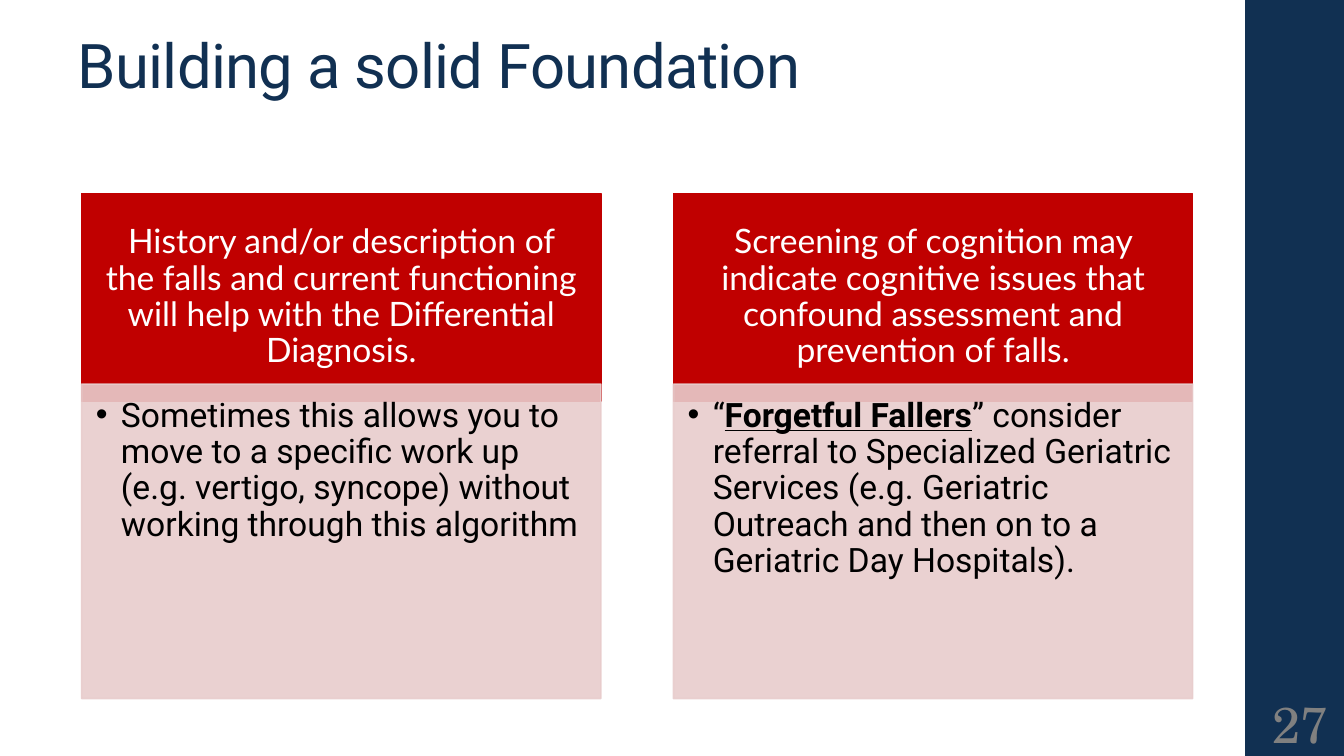
import pptx
import pptx.util
import pptx.dml.color
import pptx.enum.shapes
import pptx.enum.text
import pptx.oxml.ns
from lxml import etree

Inches = pptx.util.Inches
Align = pptx.enum.text.PP_ALIGN
Anchor = pptx.enum.text.MSO_ANCHOR

TITLE = "Building a solid Foundation"
PAGE_NUMBER = "27"
CARDS = [
    {
        "heading": "History and/or description of the falls and current functioning "
                   "will help with the Differential Diagnosis.",
        "detail": [("Sometimes this allows you to move to a specific work up "
                    "(e.g. vertigo, syncope) without working through this algorithm", False)],
    },
    {
        "heading": "Screening of cognition may indicate cognitive issues that "
                   "confound assessment and prevention of falls.",
        "detail": [
            ("“", False),
            ("Forgetful Fallers", True),
            ("” consider referral to Specialized Geriatric Services (e.g. Geriatric "
             "Outreach and then on to a Geriatric Day Hospitals).", False),
        ],
    },
]

NAVY, RED, PINK, GREY = "113052", "C00000", "E8CCCC", "808080"
CARD_LEFT, CARD_STEP, CARD_WIDTH = 0.81, 5.87, 5.15
HEADING_TOP, HEADING_HEIGHT = 1.92, 2.06
DETAIL_TOP, DETAIL_HEIGHT = 3.81, 3.12


def rgb(value):
    return pptx.dml.color.RGBColor.from_string(value)


def add_child(parent, tag, **attributes):
    child = etree.SubElement(parent, pptx.oxml.ns.qn(tag))
    for name, value in attributes.items():
        child.set(name, value)
    return child


def add_panel(page, left, top, width, height, color, outlined=True, opacity=None):
    panel = page.shapes.add_shape(
        pptx.enum.shapes.MSO_SHAPE.RECTANGLE,
        Inches(left), Inches(top), Inches(width), Inches(height))
    panel.shadow.inherit = False
    panel.fill.solid()
    panel.fill.fore_color.rgb = rgb(color)
    if outlined:
        panel.line.color.rgb = rgb(color)
        panel.line.width = pptx.util.Pt(1.1)
    else:
        panel.line.fill.background()
    if opacity:
        for color_node in panel._element.spPr.iter(pptx.oxml.ns.qn("a:srgbClr")):
            add_child(color_node, "a:alpha", val=str(opacity * 1000))
    return panel


def write(box, spans, font, size, color, align=Align.LEFT, anchor=Anchor.TOP,
          insets=(0.1, 0.05, 0.1, 0.05), line_spacing=0.9, bullet=False, tracking=None):
    frame = box.text_frame
    frame.word_wrap = True
    frame.auto_size = pptx.enum.text.MSO_AUTO_SIZE.NONE
    frame.vertical_anchor = anchor
    (frame.margin_left, frame.margin_top,
     frame.margin_right, frame.margin_bottom) = map(Inches, insets)
    para = frame.paragraphs[0]
    para.alignment = align
    para.line_spacing = line_spacing
    if bullet:
        properties = para._p.get_or_add_pPr()
        properties.set("marL", str(Inches(0.25)))
        properties.set("indent", str(-Inches(0.25)))
        add_child(properties, "a:buFont", typeface="Arial")
        add_child(properties, "a:buChar", char="•")
    for text, emphasis in spans:
        span = para.add_run()
        span.text = text
        span.font.name = font
        span.font.size = pptx.util.Pt(size)
        span.font.color.rgb = rgb(color)
        span.font.bold = emphasis
        span.font.underline = emphasis
        if tracking:
            span._r.get_or_add_rPr().set("spc", str(round(tracking * 100)))


def add_card(page, left, heading, detail):
    heading_panel = add_panel(page, left, HEADING_TOP, CARD_WIDTH, HEADING_HEIGHT, RED)
    write(heading_panel, [(heading, False)], "Lato", 24, "FFFFFF", align=Align.CENTER,
          anchor=Anchor.MIDDLE, insets=(0.19, 0.11, 0.19, 0.11))
    detail_panel = add_panel(page, left, DETAIL_TOP, CARD_WIDTH, DETAIL_HEIGHT, PINK,
                             opacity=90)
    write(detail_panel, detail, "Roboto", 24, "000000",
          insets=(0.14, 0.14, 0.19, 0.21), bullet=True)


def main():
    deck = pptx.Presentation()
    deck.slide_width, deck.slide_height = Inches(13.33), Inches(7.5)
    page = deck.slides.add_slide(deck.slide_layouts[5])

    add_panel(page, 12.35, 0, 0.98, 7.5, NAVY, outlined=False)

    title = page.shapes.title
    title.left, title.top = Inches(0.67), Inches(0.17)
    title.width, title.height = Inches(9), Inches(0.89)
    write(title, [(TITLE, False)], "Roboto", 44, NAVY, anchor=Anchor.BOTTOM, tracking=-0.5)

    number = page.shapes.add_textbox(Inches(12.52), Inches(6.85), Inches(0.75), Inches(0.65))
    write(number, [(PAGE_NUMBER, False)], "TeX Gyre Schola", 36, GREY, align=Align.CENTER,
          anchor=Anchor.MIDDLE, insets=(0.05,) * 4, line_spacing=1.0)

    for index, card in enumerate(CARDS):
        add_card(page, CARD_LEFT + index * CARD_STEP, **card)

    deck.save("out.pptx")


if __name__ == "__main__":
    main()
